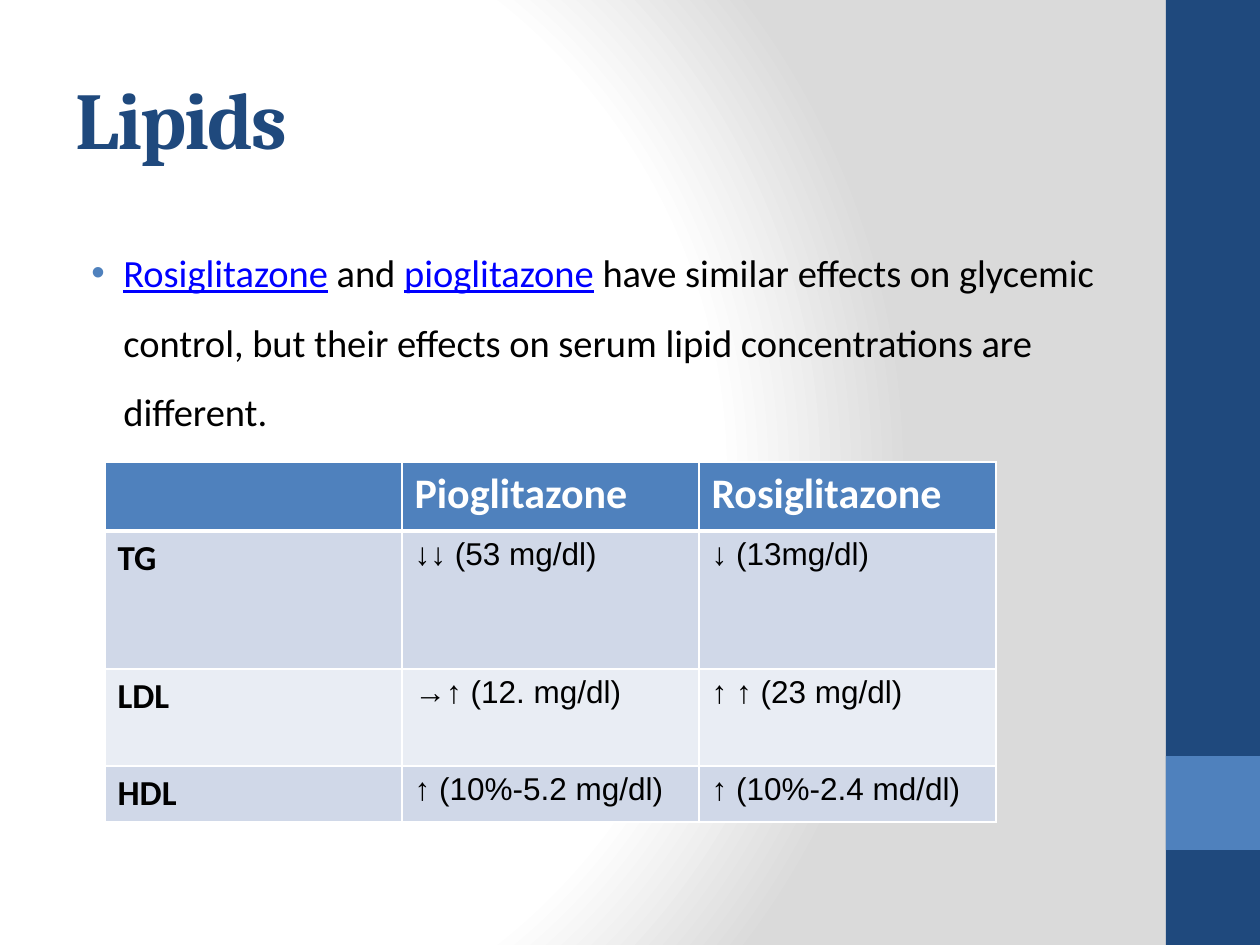
from pptx import Presentation
from pptx.dml.color import RGBColor
from pptx.enum.shapes import MSO_SHAPE
from pptx.enum.text import MSO_ANCHOR
from pptx.oxml import parse_xml
from pptx.oxml.ns import nsdecls
from pptx.util import Pt

NAVY = RGBColor(0x1F, 0x49, 0x7D)
BLUE = RGBColor(0x4F, 0x81, 0xBD)
LINK = RGBColor(0x00, 0x00, 0xFF)
BLACK = RGBColor(0x00, 0x00, 0x00)
WHITE = RGBColor(0xFF, 0xFF, 0xFF)
GREY = RGBColor(0xDA, 0xDA, 0xDA)
BAND_DARK = RGBColor(0xD0, 0xD8, 0xE8)
BAND_LIGHT = RGBColor(0xE9, 0xED, 0xF4)

EMU_PER_PX = 914400 // 126
SLIDE_SIZE = (1260, 945)
BACKGROUND_STOPS = [(0, WHITE), (75, WHITE), (100, GREY)]
BARS = [((1166, 0, 94, 945), NAVY), ((1166, 756, 94, 94), BLUE)]

TITLE = "Lipids"
TITLE_BOX = (63, 38, 1050, 158)
TITLE_FORMAT = {"name": "Cambria", "size": Pt(46), "bold": True}

BODY_BOX = (63, 220, 1050, 662)
BODY_FORMAT = {"name": "Calibri", "size": Pt(22)}
BODY_RUNS = [
    ("Rosiglitazone", True),
    (" and ", False),
    ("pioglitazone", True),
    (" have similar effects on glycemic control, but their effects on "
     "serum lipid concentrations are different.", False),
]
BODY_SPACING = {"line_spacing": 1.5, "space_before": Pt(4.4)}
BULLET_INDENT = {"marL": 48, "indent": -32}

TABLE_ORIGIN = (105, 462)
COLUMN_WIDTH = 297
ROW_HEIGHTS = [69, 138, 97, 56]
TABLE_ROWS = [
    ["", "Pioglitazone", "Rosiglitazone"],
    ["TG", "↓↓ (53 mg/dl)", "↓ (13mg/dl)"],
    ["LDL", "→↑ (12. mg/dl)", "↑ ↑ (23 mg/dl)"],
    ["HDL", "↑ (10%-5.2 mg/dl)", "↑ (10%-2.4 md/dl)"],
]
HEADER_FORMAT = {"name": "Calibri", "size": Pt(24), "bold": True}
LABEL_FORMAT = {"name": "Calibri", "size": Pt(20), "bold": True}
VALUE_FORMAT = {"name": "Arial", "size": Pt(18), "bold": False}


def px(length):
    return length * EMU_PER_PX


def set_all(target, values):
    for name, value in values.items():
        setattr(target, name, value)


def add_run(paragraph, text, values, color):
    run = paragraph.add_run()
    run.text = text
    set_all(run.font, values)
    run.font.color.rgb = color
    return run


def set_background(slide):
    stops = "".join(
        f'<a:gs pos="{position * 1000}"><a:srgbClr val="{color}"/></a:gs>'
        for position, color in BACKGROUND_STOPS)
    slide.element.cSld.insert(0, parse_xml(
        f'<p:bg {nsdecls("p", "a")}><p:bgPr><a:gradFill rotWithShape="1">'
        f'<a:gsLst>{stops}</a:gsLst><a:path path="circle">'
        '<a:fillToRect l="20000" t="50000" r="100000" b="50000"/></a:path>'
        '</a:gradFill><a:effectLst/></p:bgPr></p:bg>'))


def add_bar(slide, box, color):
    bar = slide.shapes.add_shape(MSO_SHAPE.RECTANGLE, *map(px, box))
    bar.shadow.inherit = False
    bar.fill.solid()
    bar.fill.fore_color.rgb = color
    bar.line.fill.background()


def add_text_frame(slide, box, anchor):
    frame = slide.shapes.add_textbox(*map(px, box)).text_frame
    set_all(frame, {"word_wrap": True, "vertical_anchor": anchor})
    return frame


def add_title(slide):
    frame = add_text_frame(slide, TITLE_BOX, MSO_ANCHOR.MIDDLE)
    run = add_run(frame.paragraphs[0], TITLE, TITLE_FORMAT, NAVY)
    run.font._element.set("spc", "-100")


def add_body(slide):
    paragraph = add_text_frame(slide, BODY_BOX, MSO_ANCHOR.TOP).paragraphs[0]
    set_all(paragraph, BODY_SPACING)
    properties = paragraph._p.get_or_add_pPr()
    for name, length in BULLET_INDENT.items():
        properties.set(name, str(px(length)))
    for bullet in (
            f'<a:buClr {nsdecls("a")}><a:srgbClr val="{BLUE}"/></a:buClr>',
            f'<a:buFont {nsdecls("a")} typeface="Arial"/>',
            f'<a:buChar {nsdecls("a")} char="•"/>'):
        properties.append(parse_xml(bullet))
    for text, linked in BODY_RUNS:
        values = {**BODY_FORMAT, "underline": linked}
        add_run(paragraph, text, values, LINK if linked else BLACK)


def style_cell(cell, row, column):
    widths = {"L": 1, "R": 1, "T": 3 if row == 1 else 1, "B": 3 if row == 0 else 1}
    properties = cell._tc.get_or_add_tcPr()
    for side, width in widths.items():
        properties.append(parse_xml(
            f'<a:ln{side} {nsdecls("a")} w="{Pt(width)}"><a:solidFill>'
            f'<a:srgbClr val="{WHITE}"/></a:solidFill></a:ln{side}>'))
    cell.fill.solid()
    if row == 0:
        fill, values, color = BLUE, HEADER_FORMAT, WHITE
    else:
        fill = BAND_DARK if row % 2 else BAND_LIGHT
        values, color = VALUE_FORMAT if column else LABEL_FORMAT, BLACK
    cell.fill.fore_color.rgb = fill
    text = TABLE_ROWS[row][column]
    if text:
        add_run(cell.text_frame.paragraphs[0], text, values, color)


def add_lipid_table(slide):
    row_count, column_count = len(TABLE_ROWS), len(TABLE_ROWS[0])
    size = (COLUMN_WIDTH * column_count, sum(ROW_HEIGHTS))
    table = slide.shapes.add_table(
        row_count, column_count, *map(px, TABLE_ORIGIN + size)).table
    for table_row, height in zip(table.rows, ROW_HEIGHTS):
        table_row.height = px(height)
    for row in range(row_count):
        for column in range(column_count):
            style_cell(table.cell(row, column), row, column)


def main():
    """Build the slide on lipid effects and save it."""
    presentation = Presentation()
    presentation.slide_width, presentation.slide_height = map(px, SLIDE_SIZE)
    slide = presentation.slides.add_slide(presentation.slide_layouts[6])
    set_background(slide)
    for box, color in BARS:
        add_bar(slide, box, color)
    add_title(slide)
    add_body(slide)
    add_lipid_table(slide)
    presentation.save("out.pptx")


if __name__ == "__main__":
    main()
